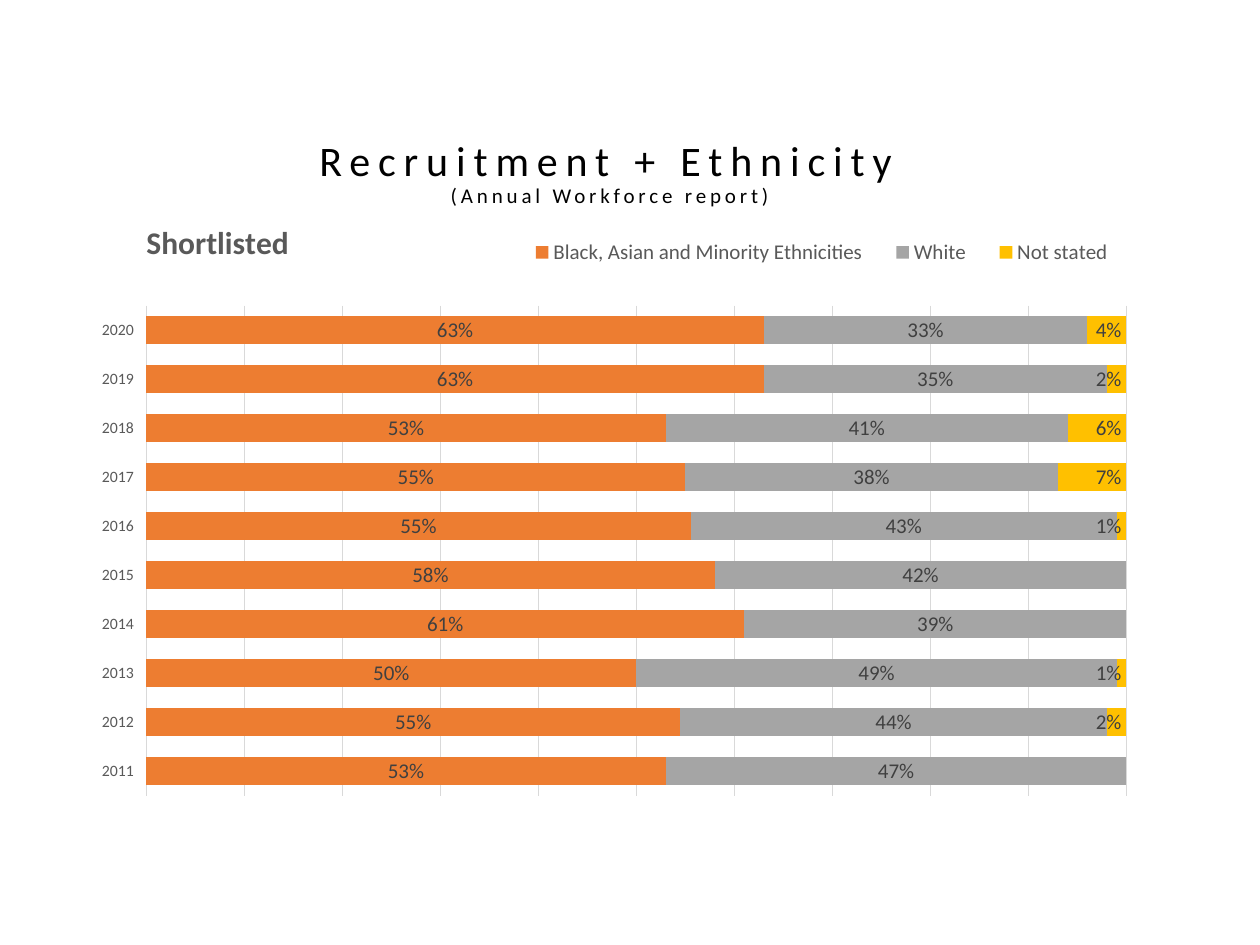
from lxml.etree import SubElement
from pptx import Presentation
from pptx.chart.data import CategoryChartData
from pptx.dml.color import RGBColor
from pptx.enum.chart import XL_CHART_TYPE as ChartType
from pptx.enum.chart import XL_LABEL_POSITION as LabelPos
from pptx.enum.chart import XL_LEGEND_POSITION as LegendPos
from pptx.enum.chart import XL_TICK_LABEL_POSITION as TickLabels
from pptx.enum.chart import XL_TICK_MARK as Tick
from pptx.enum.text import MSO_ANCHOR, PP_ALIGN
from pptx.oxml.ns import qn
from pptx.util import Pt

BLACK = RGBColor(0x00, 0x00, 0x00)
DARK = RGBColor(0x40, 0x40, 0x40)
GREY = RGBColor(0x59, 0x59, 0x59)
RULE = RGBColor(0xD9, 0xD9, 0xD9)
ORANGE = RGBColor(0xED, 0x7D, 0x31)
SILVER = RGBColor(0xA5, 0xA5, 0xA5)
GOLD = RGBColor(0xFF, 0xC0, 0x00)

HEADING = [("Recruitment + Ethnicity", 24, 4.5), ("(Annual Workforce report)", 12, 2.2)]
CHART_TITLE = "Shortlisted"
YEARS = [str(year) for year in range(2011, 2021)]
GROUPS = [
    ("Black, Asian and Minority Ethnicities", ORANGE, LabelPos.CENTER,
     [0.53, 0.55, 0.5, 0.61, 0.58, 0.55, 0.55, 0.53, 0.63, 0.63]),
    ("White", SILVER, LabelPos.CENTER,
     [0.47, 0.44, 0.49, 0.39, 0.42, 0.43, 0.38, 0.41, 0.35, 0.33]),
    ("Not stated", GOLD, LabelPos.INSIDE_END,
     [None, 0.02, 0.01, None, None, 0.01, 0.07, 0.06, 0.02, 0.04]),
]


def style_font(font, size, color, bold=False):
    for name, value in {"name": "Calibri", "size": Pt(size), "bold": bold}.items():
        setattr(font, name, value)
    font.color.rgb = color


def style_line(line):
    line.color.rgb = RULE
    line.width = Pt(0.75)


def set_layout(element, index, target=None, **fractions):
    for old in element.findall(qn("c:layout")):
        element.remove(old)
    layout = SubElement(element, qn("c:layout"))
    element.insert(index, layout)
    manual = SubElement(layout, qn("c:manualLayout"))
    settings = {"layoutTarget": target} if target else {}
    settings.update(xMode="edge", yMode="edge", **fractions)
    for tag, value in settings.items():
        SubElement(manual, qn(f"c:{tag}")).set("val", str(value))


def add_heading(slide):
    title = slide.shapes.title
    box = {"left": 38, "top": 67.5, "width": 621, "height": 64}
    for name, value in box.items():
        setattr(title, name, Pt(value))
    title.text_frame.vertical_anchor = MSO_ANCHOR.MIDDLE
    title.text_frame.word_wrap = True
    paragraph = title.text_frame.paragraphs[0]
    paragraph.alignment = PP_ALIGN.CENTER
    paragraph.line_spacing = 0.9
    for number, (text, size, spacing) in enumerate(HEADING):
        if number:
            paragraph.add_line_break()
        run = paragraph.add_run()
        run.text = text
        style_font(run.font, size, BLACK)
        run.font._element.set("spc", str(round(spacing * 100)))


def add_shortlist_chart(slide):
    data = CategoryChartData(number_format="0%")
    data.categories = YEARS
    for name, _, _, shares in GROUPS:
        data.add_series(name, shares)
    chart = slide.shapes.add_chart(
        ChartType.BAR_STACKED_100, Pt(23), Pt(104.5), Pt(638), Pt(361.5), data).chart
    style_font(chart.font, 10, BLACK)

    chart.has_title = True
    heading = chart.chart_title.text_frame
    heading.text = CHART_TITLE
    style_font(heading.paragraphs[0].runs[0].font, 18, GREY, True)
    set_layout(chart.chart_title._element, 1, x=0.09, y=0.05)

    chart.has_legend = True
    legend = chart.legend
    legend.position = LegendPos.BOTTOM
    legend.include_in_layout = False
    style_font(legend.font, 12, GREY)
    set_layout(legend._element, 1, x=0.42, y=0.07, w=0.56, h=0.08)

    years = chart.category_axis
    years.major_tick_mark = years.minor_tick_mark = Tick.NONE
    years.tick_label_position = TickLabels.LOW
    style_font(years.tick_labels.font, 9, GREY)
    style_line(years.format.line)

    shares_axis = chart.value_axis
    axis_format = {"minimum_scale": 0, "maximum_scale": 1, "major_unit": 0.1,
                   "has_major_gridlines": True, "visible": False}
    for name, value in axis_format.items():
        setattr(shares_axis, name, value)
    style_line(shares_axis.major_gridlines.format.line)

    plot = chart.plots[0]
    for name, value in {"gap_width": 75, "overlap": 100, "vary_by_categories": False}.items():
        setattr(plot, name, value)
    for series, (_, color, position, _) in zip(plot.series, GROUPS):
        series.format.fill.solid()
        series.format.fill.fore_color.rgb = color
        labels = series.data_labels
        label_format = {"show_value": True, "number_format": "0%",
                        "number_format_is_linked": False, "position": position}
        for name, value in label_format.items():
            setattr(labels, name, value)
        style_font(labels.font, 12, DARK)
    plot_area = chart._chartSpace.chart.plotArea
    set_layout(plot_area, 0, "inner", x=0.095, y=0.194, w=0.878, h=0.775)


def main():
    deck = Presentation()
    deck.slide_width, deck.slide_height = Pt(720), Pt(540)
    slide = deck.slides.add_slide(deck.slide_layouts[5])
    add_heading(slide)
    add_shortlist_chart(slide)
    deck.save("out.pptx")


if __name__ == "__main__":
    main()
